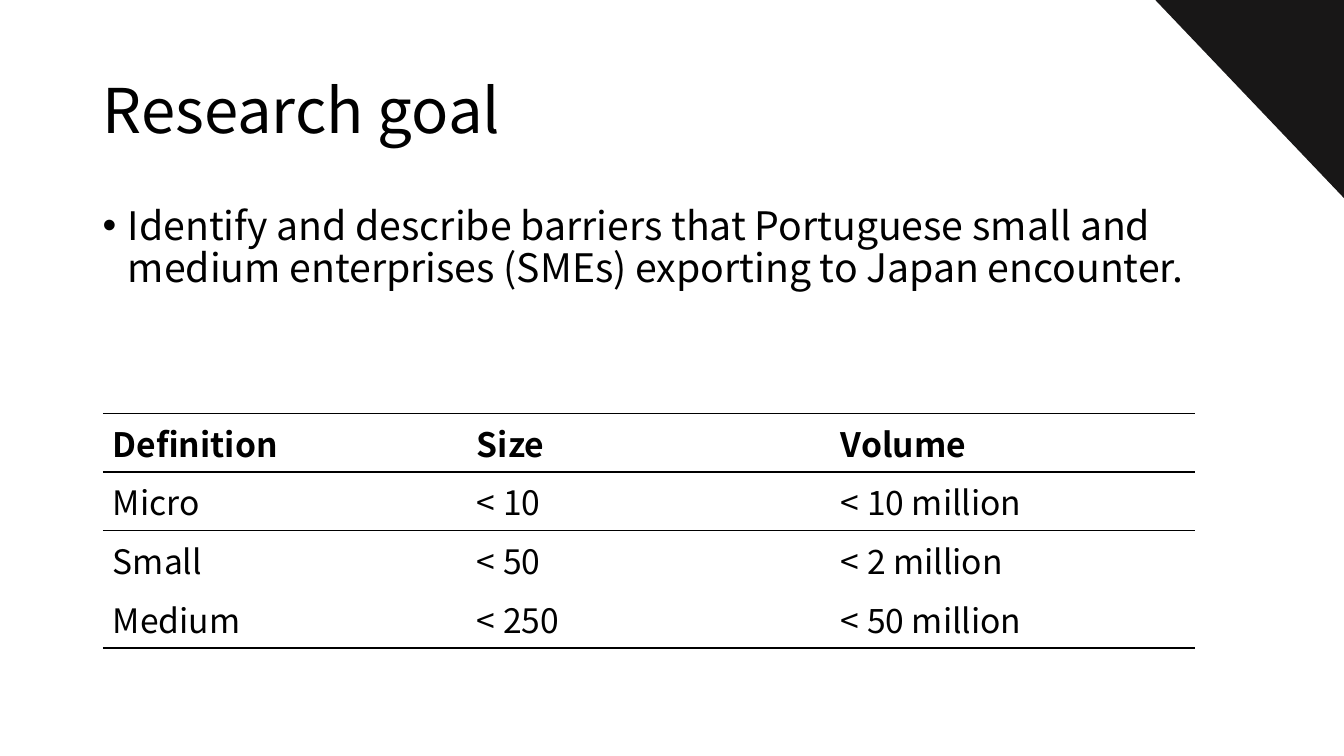
from lxml import etree
from pptx import Presentation
from pptx.dml.color import RGBColor
from pptx.enum import shapes, text
from pptx.oxml import ns
from pptx.util import Inches, Pt

FONT = "Noto Sans CJK JP"
BLACK = RGBColor(0x00, 0x00, 0x00)
CORNER = RGBColor(0x18, 0x17, 0x17)
NO_STYLE = "{2D5ABB26-0587-4C30-8999-92F81FD0307C}"

DEFINITIONS = [
    ("Definition", "Size", "Volume"),
    ("Micro", "< 10", "< 10 million"),
    ("Small", "< 50", "< 2 million"),
    ("Medium", "< 250", "< 50 million"),
]
RULED_EDGES = {0, 1, 2, 4}  # row boundaries that carry a line, counted from the top


def format_runs(paragraph, size, bold=False):
    for run in paragraph.runs:
        run.font.name = FONT
        run.font.size = Pt(size)
        run.font.bold = bold
        run.font.color.rgb = BLACK


def add_text(slide, content, top, height, size, anchor):
    box = slide.shapes.add_textbox(Inches(0.92), Inches(top), Inches(11.5), Inches(height))
    frame = box.text_frame
    frame.word_wrap = True
    frame.vertical_anchor = anchor
    frame.text = content
    paragraph = frame.paragraphs[0]
    paragraph.line_spacing = 0.9
    format_runs(paragraph, size)
    return paragraph


def add_bullet(paragraph):
    properties = paragraph._p.get_or_add_pPr()
    properties.set("marL", str(Inches(0.25)))
    properties.set("indent", str(-Inches(0.25)))
    etree.SubElement(properties, ns.qn("a:buFont"), typeface="Arial")
    etree.SubElement(properties, ns.qn("a:buChar"), char="•")


def set_borders(cell, row):
    """Rule the top and bottom of a cell where its row boundaries carry a line."""
    ruled = {"T": row in RULED_EDGES, "B": row + 1 in RULED_EDGES}
    for position, side in enumerate("LRTB"):
        line = etree.Element(ns.qn(f"a:ln{side}"), w=str(Pt(1)))
        if ruled.get(side):
            fill = etree.SubElement(line, ns.qn("a:solidFill"))
            etree.SubElement(fill, ns.qn("a:srgbClr"), val=str(BLACK))
        else:
            etree.SubElement(line, ns.qn("a:noFill"))
        cell._tc.get_or_add_tcPr().insert(position, line)


def add_definition_table(slide):
    row_count, column_count = len(DEFINITIONS), len(DEFINITIONS[0])
    frame = slide.shapes.add_table(row_count, column_count, Inches(1.02), Inches(4.1),
                                   Inches(10.83), Inches(2.33))
    table = frame.table
    table.horz_banding = False
    table._tbl.tblPr.find(ns.qn("a:tableStyleId")).text = NO_STYLE
    for row, values in enumerate(DEFINITIONS):
        for column, value in enumerate(values):
            cell = table.cell(row, column)
            cell.text = value
            format_runs(cell.text_frame.paragraphs[0], 24, bold=row == 0)
            cell.fill.background()
            set_borders(cell, row)


def add_corner(slide):
    corner = slide.shapes.add_shape(shapes.MSO_SHAPE.ISOSCELES_TRIANGLE, Inches(11.73),
                                    Inches(-0.65), Inches(2.77), Inches(1.95))
    corner.rotation = 46.4
    corner.shadow.inherit = False
    corner.fill.solid()
    corner.fill.fore_color.rgb = CORNER
    corner.line.fill.background()


def main():
    presentation = Presentation()
    presentation.slide_width = Inches(13.33)
    presentation.slide_height = Inches(7.5)
    slide = presentation.slides.add_slide(presentation.slide_layouts[6])

    add_text(slide, "Research goal", 0.4, 1.45, 44, text.MSO_ANCHOR.MIDDLE)
    goal = add_text(
        slide,
        "Identify and describe barriers that Portuguese small and medium enterprises "
        "(SMEs) exporting to Japan encounter.",
        2, 1.14, 28, text.MSO_ANCHOR.TOP)
    goal.space_before = Pt(10)
    add_bullet(goal)
    add_definition_table(slide)
    add_corner(slide)
    presentation.save("out.pptx")


if __name__ == "__main__":
    main()
